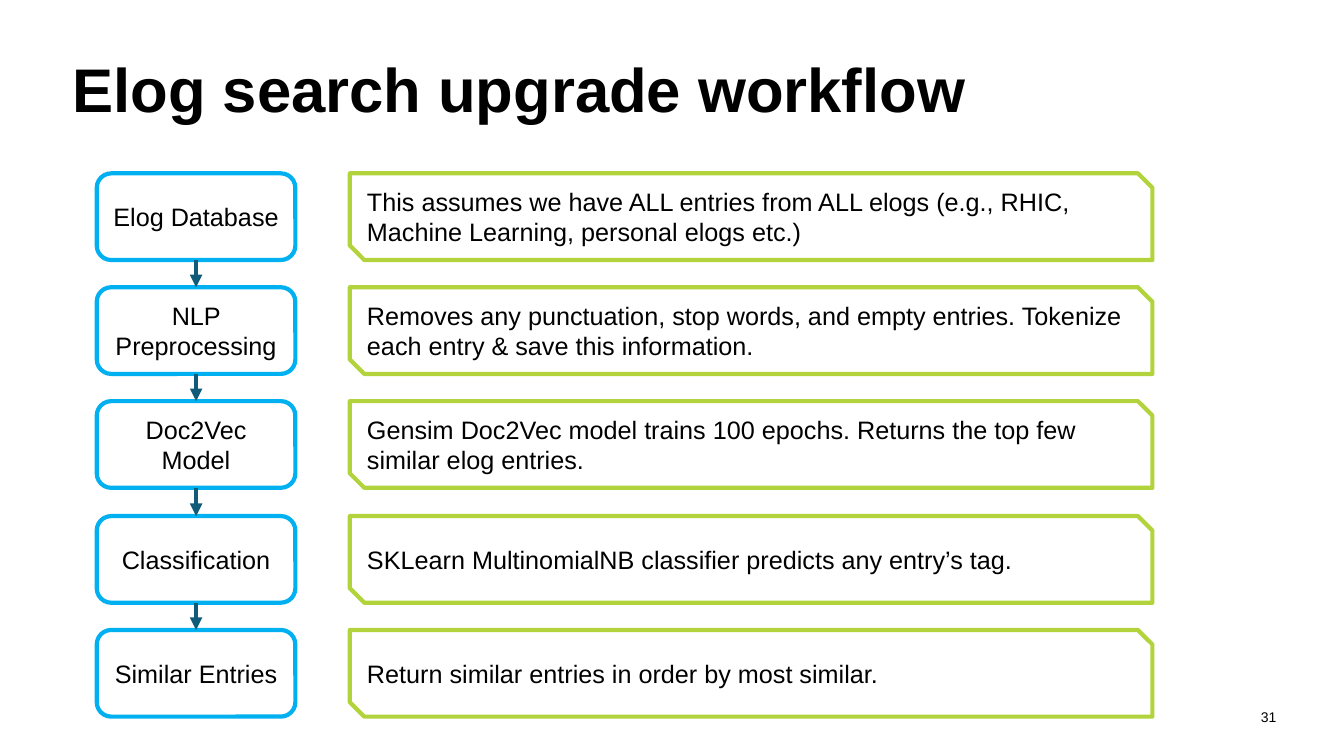
"""Build the slide on the elog search workflow: five linked steps with notes."""
from dataclasses import dataclass

from lxml import etree
from pptx import Presentation
from pptx.dml.color import RGBColor
from pptx.enum.shapes import MSO_CONNECTOR, MSO_SHAPE
from pptx.enum.text import MSO_ANCHOR, PP_ALIGN
from pptx.oxml.ns import qn
from pptx.util import Emu, Pt

ROUND = MSO_SHAPE.ROUNDED_RECTANGLE
SNIP = MSO_SHAPE.SNIP_2_DIAG_RECTANGLE
STRAIGHT = MSO_CONNECTOR.STRAIGHT
MIDDLE = MSO_ANCHOR.MIDDLE
LEFT, CENTER, RIGHT = PP_ALIGN.LEFT, PP_ALIGN.CENTER, PP_ALIGN.RIGHT

TITLE = "Elog search upgrade workflow"
NUMBER = "31"
STEPS = [
    ("Elog Database",
     "This assumes we have ALL entries from ALL elogs "
     "(e.g., RHIC, Machine Learning, personal elogs etc.)"),
    ("NLP Preprocessing",
     "Removes any punctuation, stop words, and empty entries. "
     "Tokenize each entry & save this information."),
    ("Doc2Vec Model",
     "Gensim Doc2Vec model trains 100 epochs. "
     "Returns the top few similar elog entries."),
    ("Classification",
     "SKLearn MultinomialNB classifier predicts any entry’s tag."),
    ("Similar Entries",
     "Return similar entries in order by most similar."),
]


@dataclass(frozen=True)
class Theme:
    """Colours, font and type sizes."""
    font: str = "Arial"
    text: str = "000000"
    step: str = "00B0F0"
    note: str = "B2D33B"
    arrow: str = "105C78"
    head: int = 44
    body: int = 18
    small: int = 10
    line: int = 3


THEME = Theme()
SCALE = 9144
SLIDE = (1333, 750)
HEAD_BOX = (62, 19, 1208, 145)
NUM_BOX = (1224, 691, 47, 40)
FIRST, LAST, HIGH = 172, 625, 86
STEP_X, STEP_W = 96, 197
NOTE_X, NOTE_W = 347, 796


def px(*sizes):
    return [Emu(size * SCALE) for size in sizes]


def color(code):
    return RGBColor.from_string(code)


def write(shape, text, size, align, bold=False):
    frame = shape.text_frame
    frame.word_wrap = True
    frame.vertical_anchor = MIDDLE
    para = frame.paragraphs[0]
    para.text = text
    para.alignment = align
    font = para.font
    font.name, font.size, font.bold = THEME.font, Pt(size), bold
    font.color.rgb = color(THEME.text)
    return frame


def add_box(slide, kind, box, edge, text, align):
    shape = slide.shapes.add_shape(kind, *px(*box))
    shape.shadow.inherit = False
    shape.fill.background()
    shape.line.color.rgb = color(edge)
    shape.line.width = Pt(THEME.line)
    write(shape, text, THEME.body, align)
    return shape


def add_arrow(slide, start, end):
    arrow = slide.shapes.add_connector(STRAIGHT, 0, 0, 0, 0)
    arrow.begin_connect(start, 2)
    arrow.end_connect(end, 0)
    arrow.line.color.rgb = color(THEME.arrow)
    arrow.line.width = Pt(THEME.line)
    etree.SubElement(arrow.line._get_or_add_ln(), qn("a:tailEnd"), type="triangle")
    etree.SubElement(arrow._element.spPr, qn("a:effectLst"))


def main():
    deck = Presentation()
    deck.slide_width, deck.slide_height = px(*SLIDE)
    slide = deck.slides.add_slide(deck.slide_layouts[6])

    head = slide.shapes.add_textbox(*px(*HEAD_BOX))
    write(head, TITLE, THEME.head, LEFT, True).paragraphs[0].line_spacing = 0.9
    number = slide.shapes.add_textbox(*px(*NUM_BOX))
    frame = write(number, NUMBER, THEME.small, RIGHT)
    frame.margin_left, frame.margin_top, frame.margin_right, frame.margin_bottom = px(0, 0, 5, 0)

    pitch = (LAST - FIRST) / (len(STEPS) - 1)
    prior = None
    for row, (name, note) in enumerate(STEPS):
        top = FIRST + round(row * pitch)
        step = add_box(slide, ROUND, (STEP_X, top, STEP_W, HIGH), THEME.step, name, CENTER)
        add_box(slide, SNIP, (NOTE_X, top, NOTE_W, HIGH), THEME.note, note, LEFT)
        if prior is not None:
            add_arrow(slide, prior, step)
        prior = step

    deck.save("out.pptx")


if __name__ == "__main__":
    main()
